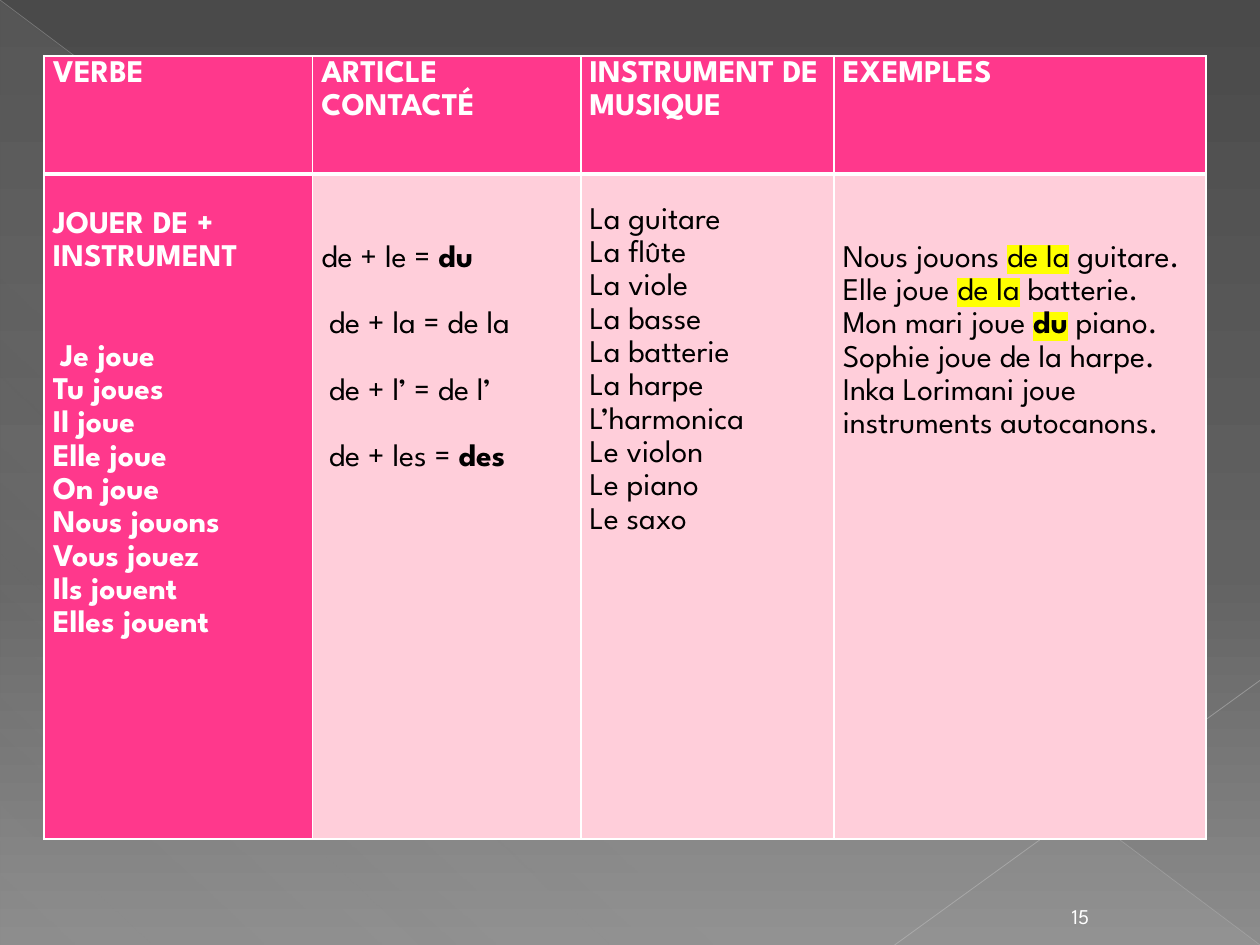
from dataclasses import dataclass
from lxml import etree
from pptx import Presentation, util as u
from pptx.dml.color import RGBColor
from pptx.enum import shapes, text
from pptx.oxml.ns import qn

WIDE, HIGH = u.Inches(10), u.Inches(7.5)


@dataclass(frozen=True)
class Theme:
    """Colours, font and type sizes."""
    font: str = "League Spartan"
    pink: str = "FF388C"
    pale: str = "FFCEDA"
    white: str = "FFFFFF"
    black: str = "000000"
    mark: str = "FFFF00"
    veil: str = "D2D2D2"
    rays: tuple = ("BFBFBF", "C6C6C6")
    back: tuple = ((0, "4A4A4A", 100), (60, "626262", 100), (100, "8C8C8C", 100))
    body: int = 18
    small: int = 12
    lead: float = 1.15


T = Theme()
LINE = 19  # points taken by one row of body text

HEADS = ["VERBE", "ARTICLE CONTACTÉ", "INSTRUMENT DE MUSIQUE", "EXEMPLES"]
VERBS = ["JOUER DE + INSTRUMENT", "Je joue", "Tu joues", "Il joue", "Elle joue",
         "On joue", "Nous jouons", "Vous jouez", "Ils jouent", "Elles jouent"]
FORMS = [("de + le = ", "du"), ("de + la = de la", ""),
         ("de + l’ = de l’", ""), ("de + les = ", "des")]
TUNES = ["La guitare", "La flûte", "La viole", "La basse", "La batterie",
         "La harpe", "L’harmonica", "Le violon", "Le piano", "Le saxo"]
CASES = [("Nous jouons ", "de la", " guitare."),
         ("Elle joue ", "de la", " batterie."),
         ("Mon mari joue ", "du", " piano."),
         ("Sophie joue de la harpe.",),
         ("Inka Lorimani joue instruments autocanons.",)]


def spot(x, y):
    """Turn shares of the slide into lengths."""
    return int(x * WIDE), int(y * HIGH)


def node(root, tag, **attrs):
    """Add a drawing element under root."""
    return etree.SubElement(root, qn("a:" + tag), attrs)


def tint(root, color, alpha=100):
    """Add a colour with its opacity in percent."""
    item = node(root, "srgbClr", val=color)
    if alpha < 100:
        node(item, "alpha", val=str(alpha * 1000))


def blend(fill, root, stops, angle):
    """Give a fill a linear gradient running clockwise from the left."""
    fill.gradient()
    grad = root.find(".//" + qn("a:gradFill"))
    for child in list(grad):
        grad.remove(child)
    group = node(grad, "gsLst")
    for pos, color, alpha in stops:
        tint(node(group, "gs", pos=str(pos * 1000)), color, alpha)
    node(grad, "lin", ang=str(angle * 60000), scaled="0")


def write(par, words, size=T.body, color=T.black, bold=False, mark=None):
    """Add one formatted run to a paragraph."""
    run = par.add_run()
    run.text = words
    font = run.font
    font.size, font.bold, font.name = u.Pt(size), bold, T.font
    font.color.rgb = RGBColor.from_string(color)
    if mark:
        props = run._r.get_or_add_rPr()
        light = node(props, "highlight")
        tint(light, mark)
        props.find(qn("a:latin")).addprevious(light)


def row(frame, first, before=0, inset=0):
    """Return a fresh paragraph with the table's line spacing."""
    par = frame.paragraphs[0] if first else frame.add_paragraph()
    par.line_spacing = T.lead
    if before:
        par.space_before = u.Pt(before)
    if inset:
        par._p.get_or_add_pPr().set("marL", str(u.Inches(inset)))
    return par


def paint(cell, color, top, widths):
    """Set a cell's fill, top inset and border widths by side."""
    cell.margin_left = cell.margin_right = u.Inches(0.07)
    cell.margin_top, cell.margin_bottom = u.Inches(top), 0
    cell.fill.solid()
    cell.fill.fore_color.rgb = RGBColor.from_string(color)
    props = cell._tc.get_or_add_tcPr()
    for rank, side in enumerate("LRTB"):
        edge = node(props, "ln" + side, w=str(u.Pt(widths.get(side, 1))))
        tint(node(edge, "solidFill"), T.white)
        props.insert(rank, edge)


def ray(slide, start, end, color, width, alpha):
    """Draw a faint line across the backdrop."""
    line = slide.shapes.add_connector(
        shapes.MSO_CONNECTOR.STRAIGHT, *spot(*start), *spot(*end))
    line.line.width = u.Pt(width)
    line.line.color.rgb = RGBColor.from_string(color)
    hue = line._element.spPr.find(".//" + qn("a:srgbClr"))
    node(hue, "alpha", val=str(alpha * 1000))
    node(line._element.spPr, "effectLst")


def scene(slide):
    """Build the grey backdrop with its veil and rays."""
    blend(slide.background.fill, slide.element, T.back, 90)
    veil = slide.shapes.add_shape(
        shapes.MSO_SHAPE.RIGHT_TRIANGLE, *spot(0, 0), *spot(1, 1))
    veil.shadow.inherit = False
    veil.line.fill.background()
    stops = [(pos, T.veil, alpha) for pos, alpha in ((0, 10), (70, 8), (100, 1))]
    blend(veil.fill, veil._element.spPr, stops, 133)
    ray(slide, (0, 0), (1, 1), T.rays[0], 0.39, 35)
    ray(slide, (1, 0.72), (0.71, 1), T.rays[1], 0.47, 45)


def grid(slide):
    """Add the table and return it with fills and borders set."""
    cols, rows = (0.213, 0.213, 0.201, 0.295), (0.125, 0.704)
    table = slide.shapes.add_table(
        2, 4, *spot(0.035, 0.059), *spot(sum(cols), sum(rows))).table
    for col, share in zip(table.columns, cols):
        col.width = int(share * WIDE)
    for band, share in zip(table.rows, rows):
        band.height = int(share * HIGH)
    tops = (0.26, 0.53, 0.23, 0.53)
    for k, head in enumerate(HEADS):
        cell = table.cell(0, k)
        paint(cell, T.pink, 0, {"B": 3})
        write(row(cell.text_frame, True), head, color=T.white, bold=True)
        paint(table.cell(1, k), T.pale if k else T.pink, tops[k], {"T": 3})
    return table


def body(table):
    """Fill the four columns of the lower row."""
    verbs, forms, tunes, cases = (table.cell(1, k).text_frame for k in range(4))
    for k, verb in enumerate(VERBS):
        par = row(verbs, k == 0, 2 * LINE if k == 1 else 0, 0.06 if k == 1 else 0)
        write(par, verb, color=T.white, bold=True)
    for k, (rule, result) in enumerate(FORMS):
        par = row(forms, k == 0, LINE if k else 0, 0.06 if k else 0)
        write(par, rule)
        if result:
            write(par, result, bold=True)
    for k, tune in enumerate(TUNES):
        write(row(tunes, k == 0), tune)
    for k, parts in enumerate(CASES):
        par = row(cases, k == 0)
        for n, part in enumerate(parts):
            write(par, part, bold=part == "du", mark=T.mark if n == 1 else None)


def folio(slide, number):
    """Add the page number."""
    frame = slide.shapes.add_textbox(
        *spot(0.83, 0.945), *spot(0.055, 0.044)).text_frame
    frame.word_wrap = True
    frame.vertical_anchor = text.MSO_ANCHOR.BOTTOM
    par = frame.paragraphs[0]
    par.alignment = text.PP_ALIGN.CENTER
    write(par, number, size=T.small, color=T.white)


def main():
    """Build and save the slide."""
    deck = Presentation()
    deck.slide_width, deck.slide_height = WIDE, HIGH
    slide = deck.slides.add_slide(deck.slide_layouts[6])
    scene(slide)
    body(grid(slide))
    folio(slide, "15")
    deck.save("out.pptx")


main()
